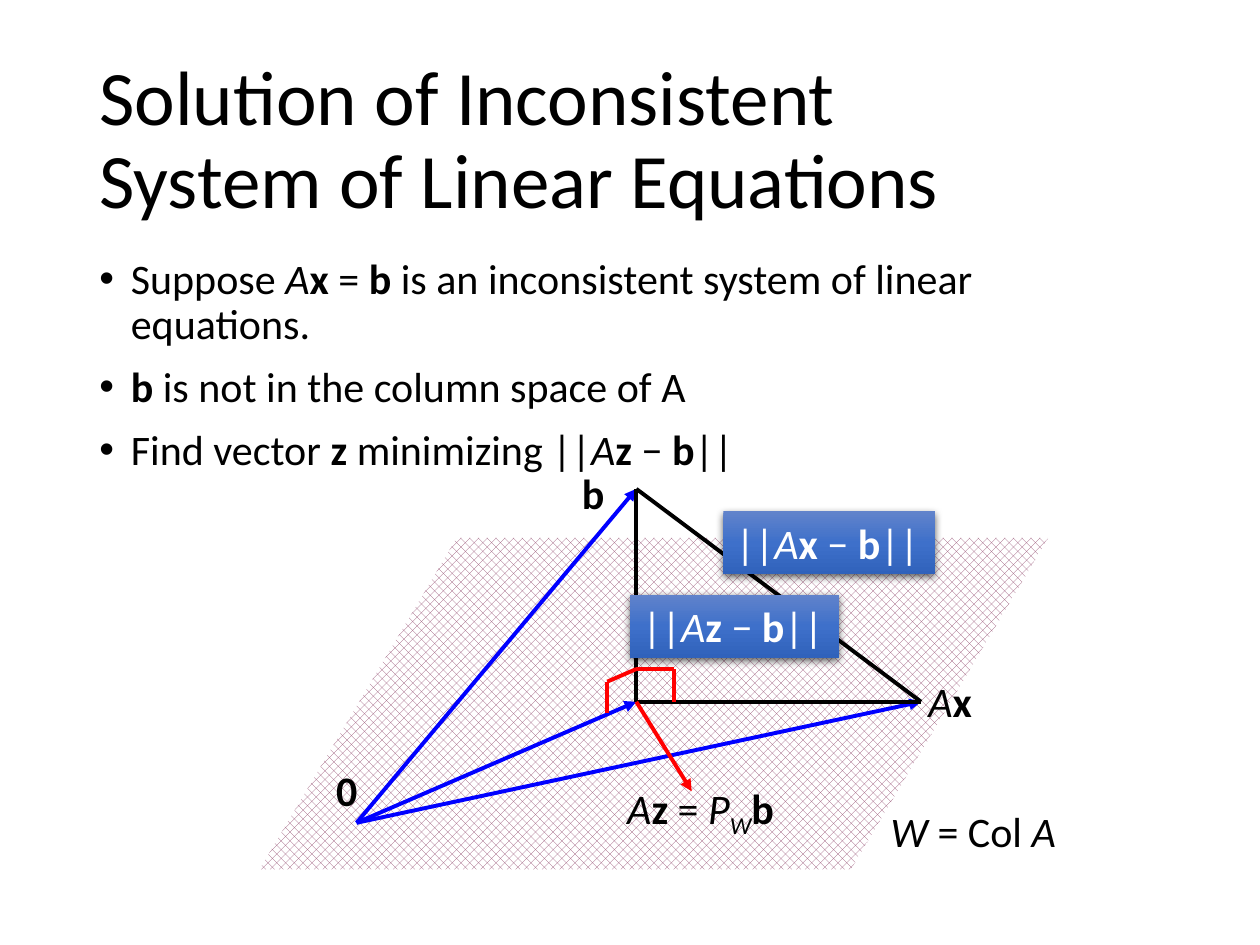
from copy import deepcopy
from dataclasses import dataclass

from lxml.etree import SubElement
from pptx import Presentation
from pptx.dml.color import RGBColor
from pptx.enum.dml import MSO_PATTERN
from pptx.enum.shapes import MSO_CONNECTOR, MSO_SHAPE
from pptx.enum.text import MSO_ANCHOR, MSO_AUTO_SIZE, PP_ALIGN
from pptx.oxml.ns import qn
from pptx.util import Inches, Pt


@dataclass(frozen=True)
class Theme:
    font: str = "Calibri"
    head: int = 44
    text: int = 24
    stroke: float = 2.25
    black: str = "000000"
    white: str = "FFFFFF"
    blue: str = "0000FF"
    red: str = "FF0000"
    plane: str = "954F72"
    shade: tuple = ("6183CB", "3E70CA", "3062BB")


@dataclass(frozen=True)
class Box:
    """A region in inches, ruled into square cells."""
    left: float
    top: float
    width: float
    height: float
    cell: float = 0.1

    def spot(self, col, row):
        return Inches(self.left + col * self.cell), Inches(self.top + row * self.cell)

    def area(self, col, row, cols, rows):
        return *self.spot(col, row), Inches(cols * self.cell), Inches(rows * self.cell)

    def whole(self):
        return self.area(0, 0, self.width / self.cell, self.height / self.cell)


THEME = Theme()


def tint(code):
    return RGBColor.from_string(code)


def style(run, size, color, marks=""):
    """Marks: b is bold, i is italic, s is subscript."""
    font = run.font
    font.name, font.size, font.color.rgb = THEME.font, Pt(size), tint(color)
    font.bold, font.italic = "b" in marks, "i" in marks
    if "s" in marks:
        run._r.get_or_add_rPr().set("baseline", "-25000")


def write(para, parts, color=THEME.black):
    for marks, text in parts:
        run = para.add_run()
        run.text = text
        style(run, THEME.text, color, marks)


def norm(name):
    """The length of the gap between a vector and b."""
    return [("", "||"), ("i", "A"), ("b", name + " "), ("", "− "), ("b", "b"), ("", "||")]


def title(slide, box):
    frame = slide.shapes.add_textbox(*box.whole()).text_frame
    frame.word_wrap, frame.vertical_anchor = True, MSO_ANCHOR.MIDDLE
    para = frame.paragraphs[0]
    para.text = "Solution of Inconsistent \vSystem of Linear Equations"
    para.line_spacing = 0.9
    for run in para.runs:
        style(run, THEME.head, THEME.black)


def body(slide, box):
    points = [
        [("", "Suppose "), ("i", "A"), ("b", "x "), ("", "= "), ("b", "b"),
         ("", " is an inconsistent system of linear equations.")],
        [("b", "b"), ("", " is not in the column space of A")],
        [("", "Find vector "), ("b", "z "), ("", "minimizing ")] + norm("z"),
    ]
    frame = slide.shapes.add_textbox(*box.whole()).text_frame
    frame.word_wrap = True
    for i, parts in enumerate(points):
        para = frame.add_paragraph() if i else frame.paragraphs[0]
        para.line_spacing, para.space_before = 0.9, Pt(10)
        props = para._p.get_or_add_pPr()
        props.set("marL", str(Inches(0.25)))
        props.set("indent", str(-Inches(0.25)))
        SubElement(props, qn("a:buFont"), typeface="Arial")
        SubElement(props, qn("a:buChar"), char="•")
        write(para, parts)


def line(slide, box, start, end, color, arrow=False):
    link = slide.shapes.add_connector(
        MSO_CONNECTOR.STRAIGHT, *box.spot(*start), *box.spot(*end))
    link.line.color.rgb, link.line.width = tint(color), Pt(THEME.stroke)
    if arrow:
        SubElement(link.line._get_or_add_ln(), qn("a:tailEnd"), type="triangle")
    SubElement(link._element.spPr, qn("a:effectLst"))


def label(shape, parts, color=THEME.black, wrap=False):
    frame = shape.text_frame
    frame.word_wrap, frame.auto_size = wrap, MSO_AUTO_SIZE.SHAPE_TO_FIT_TEXT
    frame.vertical_anchor = MSO_ANCHOR.TOP
    frame.paragraphs[0].alignment = PP_ALIGN.LEFT
    write(frame.paragraphs[0], parts, color)


def plate(slide, area, parts):
    """A shaded label with a soft shadow."""
    shape = slide.shapes.add_shape(MSO_SHAPE.RECTANGLE, *area)
    shape.line.fill.background()
    fill = shape.fill
    fill.gradient()
    fill.gradient_angle = 270
    props = shape._element.spPr
    stops = props.find(".//" + qn("a:gsLst"))
    stops.insert(1, deepcopy(stops[0]))
    for i, (stop, code) in enumerate(zip(fill.gradient_stops, THEME.shade)):
        stop.position, stop.color.rgb = i / 2, tint(code)
    shape.shadow.inherit = False
    glow = SubElement(props.find(qn("a:effectLst")), qn("a:outerShdw"),
                      blurRad=str(Pt(4.5)), dist=str(Pt(1.5)), dir="5400000",
                      algn="ctr", rotWithShape="0")
    dark = SubElement(glow, qn("a:srgbClr"), val=THEME.black)
    SubElement(dark, qn("a:alpha"), val="63000")
    label(shape, parts, THEME.white)


def figure(slide, box):
    # Plane W
    plane = slide.shapes.add_shape(MSO_SHAPE.PARALLELOGRAM, *box.area(0.6, 7.7, 62.6, 26.3))
    plane.adjustments[0] = 0.595
    plane.shadow.inherit = False
    plane.line.fill.background()
    plane.fill.patterned()
    plane.fill.pattern = MSO_PATTERN.PERCENT_50
    plane.fill.fore_color.rgb, plane.fill.back_color.rgb = tint(THEME.plane), tint(THEME.white)

    # Vectors from zero, and the triangle b, Az, Ax
    zero, tip, foot, far = (8.3, 30.3), (30.5, 3.8), (30.5, 20.7), (53.1, 20.7)
    for end in (foot, tip, far):
        line(slide, box, zero, end, THEME.blue, arrow=True)
    for start, end in ((far, tip), (foot, far), (tip, foot)):
        line(slide, box, start, end, THEME.black)

    # Right angles at Az
    marks = [(28.2, 21.6), (28.2, 19.1), (30.5, 18.1), (33.5, 18.1), (33.5, 20.7)]
    for start, end in zip(marks, marks[1:]):
        line(slide, box, start, end, THEME.red)

    # Names of the points
    names = [
        ((5.7, 25.2, 4.3, 5), [("b", "0")], True),
        ((25.2, 1.6, 3.8, 5), [("b", "b")], False),
        ((52.7, 18.1, 5.5, 5), [("i", "A"), ("b", "x")], False),
        ((49.7, 28.4, 18.1, 5), [("i", "W"), ("", " = Col "), ("i", "A")], True),
        ((28.8, 26.6, 14, 5), [("i", "A"), ("b", "z "), ("", "= "), ("i", "P"),
                               ("is", "W"), ("b", "b")], False),
    ]
    for area, parts, wrap in names:
        label(slide.shapes.add_textbox(*box.area(*area)), parts, wrap=wrap)
    line(slide, box, foot, (34.9, 27.8), THEME.red, arrow=True)

    # Lengths of the sides
    plate(slide, box.area(30, 12.2, 16.6, 5), norm("z"))
    plate(slide, box.area(37.4, 5.6, 16.8, 5), norm("x"))


def main():
    deck = Presentation()
    deck.slide_width, deck.slide_height = Inches(10), Inches(7.5)
    slide = deck.slides.add_slide(deck.slide_layouts[6])
    title(slide, Box(0.69, 0.4, 8.62, 1.45))
    body(slide, Box(0.69, 2, 8.62, 4.76))
    figure(slide, Box(2, 3.5, 7, 3.5))
    deck.save("out.pptx")


if __name__ == "__main__":
    main()
